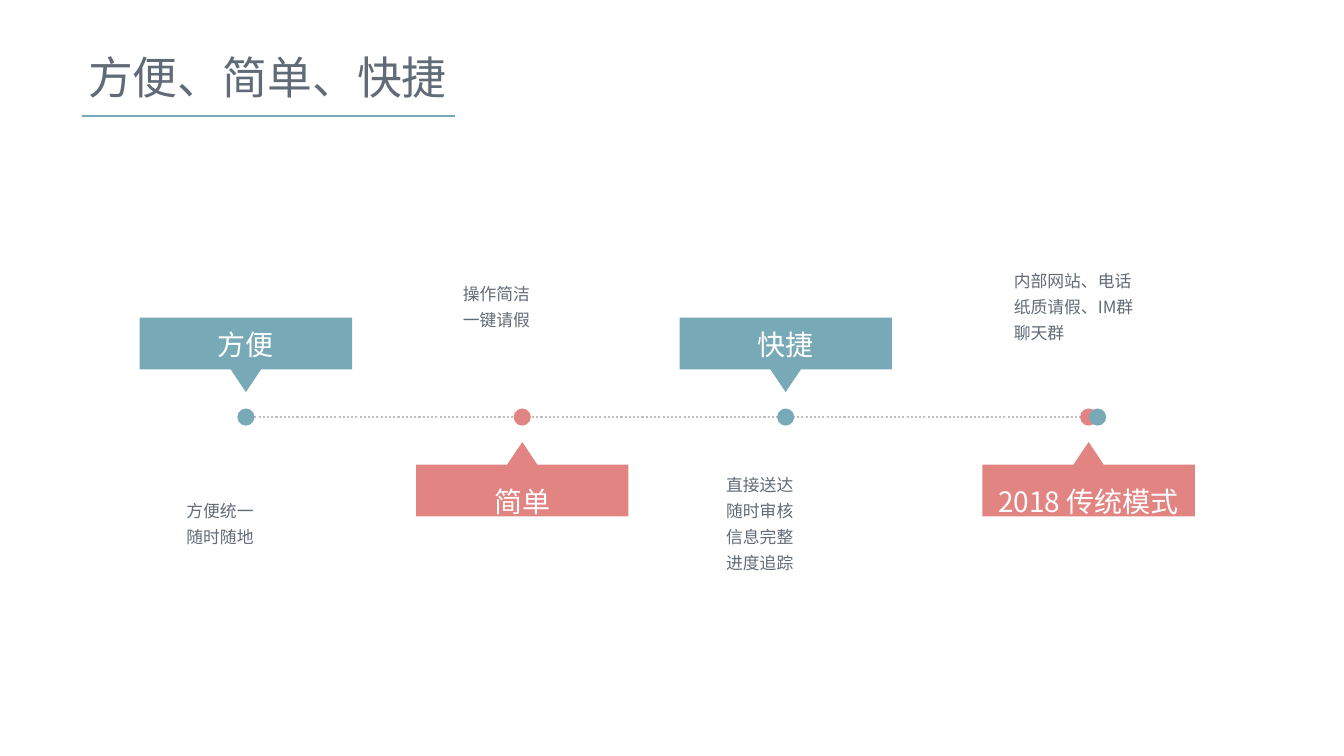
from pptx import Presentation
from pptx.dml.color import RGBColor
from pptx.enum.dml import MSO_LINE
from pptx.enum.shapes import MSO_CONNECTOR, MSO_SHAPE
from pptx.enum.text import MSO_ANCHOR, MSO_AUTO_SIZE, PP_ALIGN
from pptx.oxml.ns import qn
from pptx.util import Inches, Pt
from lxml import etree

FONT = "Noto Sans CJK SC"
COLORS = {"teal": "78A9B7", "coral": "E18482", "ink": "616B77",
          "axis": "BFBFBF", "white": "FFFFFF"}
W, H = Inches(13.33), Inches(7.5)
AXIS_Y = 55.17
DOT = 0.17
STOPS = [
    (18.3, "teal", "方便", ["方便统一", "随时随地"], 0.25),
    (38.86, "coral", "简单", ["操作简洁", "一键请假"], 0.25),
    (58.46, "teal", "快捷", ["直接送达", "随时审核", "信息完整", "进度追踪"], 0.25),
    (81, "coral", "2018 传统模式", ["内部网站、电话", "纸质请假、IM群", "聊天群"], 0.1),
]


def rgb(name):
    return RGBColor.from_string(COLORS[name])


def across(share):
    return round(W * share / 100)


def down(share):
    return round(H * share / 100)


def set_all(target, values):
    for name, value in values.items():
        setattr(target, name, value)


def paint(sp, color):
    sp.shadow.inherit = False
    sp.fill.solid()
    sp.fill.fore_color.rgb = rgb(color)
    sp.line.fill.background()


def write(tf, lines, size, color, frame, para):
    set_all(tf, frame)
    for i, line in enumerate(lines):
        p = tf.paragraphs[0] if i == 0 else tf.add_paragraph()
        set_all(p, para)
        r = p.add_run()
        r.text = line
        set_all(r.font, {"size": Pt(size), "name": FONT})
        r.font.color.rgb = rgb(color)
        ea = etree.SubElement(r.font._element, qn("a:ea"))
        ea.set("typeface", FONT)


def add_line(s, x1, x2, y, color, dash=None):
    line = s.shapes.add_connector(MSO_CONNECTOR.STRAIGHT, across(x1), down(y),
                                  across(x2), down(y))
    line.line.color.rgb = rgb(color)
    line.line.width = Pt(1.5)
    if dash:
        line.line.dash_style = dash
    etree.SubElement(line._element.spPr, qn("a:effectLst"))


def add_title(s, x, y, w, h, text):
    tb = s.shapes.add_textbox(across(x), down(y), across(w), down(h))
    write(tb.text_frame, [text], 32, "ink",
          {"word_wrap": False, "auto_size": MSO_AUTO_SIZE.SHAPE_TO_FIT_TEXT},
          {"alignment": PP_ALIGN.CENTER})
    add_line(s, x + 0.38, x + w - 0.3, 15.33, "teal")


def add_dot(s, cx, color):
    d = Inches(DOT)
    dot = s.shapes.add_shape(MSO_SHAPE.OVAL, across(cx) - d // 2,
                             down(AXIS_Y) - d // 2, d, d)
    paint(dot, color)


def add_callout(s, cx, color, text, side):
    half, point = 7.9, 1.13
    tip, neck, base = (AXIS_Y + side * gap for gap in (3.3, 6.3, 13.15))
    outline = [(0, tip), (point, neck), (half, neck), (half, base),
               (-half, base), (-half, neck), (-point, neck)]
    points = [(across(cx + dx), down(y)) for dx, y in outline]
    builder = s.shapes.build_freeform(*points[0])
    builder.add_line_segments(points[1:])
    sp = builder.convert_to_shape()
    paint(sp, color)
    below = side > 0
    write(sp.text_frame, [text], 20, "white",
          {"word_wrap": False, "margin_top": Inches(0.16),
           "vertical_anchor": MSO_ANCHOR.MIDDLE if below else MSO_ANCHOR.TOP},
          {"alignment": PP_ALIGN.CENTER, "line_spacing": 2.0 if below else 0.8})


def add_note(s, cx, y, lines, inset):
    w, h = 12.6, 18.8
    tb = s.shapes.add_textbox(across(cx - w / 2), down(y), across(w), down(h))
    write(tb.text_frame, lines, 12, "ink",
          {"word_wrap": True, "margin_left": Inches(inset),
           "vertical_anchor": MSO_ANCHOR.MIDDLE}, {"line_spacing": 1.3})


def add_timeline(s, stops):
    first, last = stops[0][0], stops[-1][0]
    add_line(s, first, last + 0.65, AXIS_Y, "axis", MSO_LINE.ROUND_DOT)
    for i, (cx, color, label, lines, inset) in enumerate(stops):
        side = 1 if i % 2 else -1
        add_callout(s, cx, color, label, side)
        add_dot(s, cx, color)
        add_note(s, cx, 30.75 if side > 0 else 59.47, lines, inset)
    add_dot(s, last + 0.67, "teal")


def main():
    prs = Presentation()
    set_all(prs, {"slide_width": W, "slide_height": H})
    s = prs.slides.add_slide(prs.slide_layouts[6])
    add_title(s, 5.7, 5.87, 28.43, 8.53, "方便、简单、快捷")
    add_timeline(s, STOPS)
    prs.save("out.pptx")


if __name__ == "__main__":
    main()
